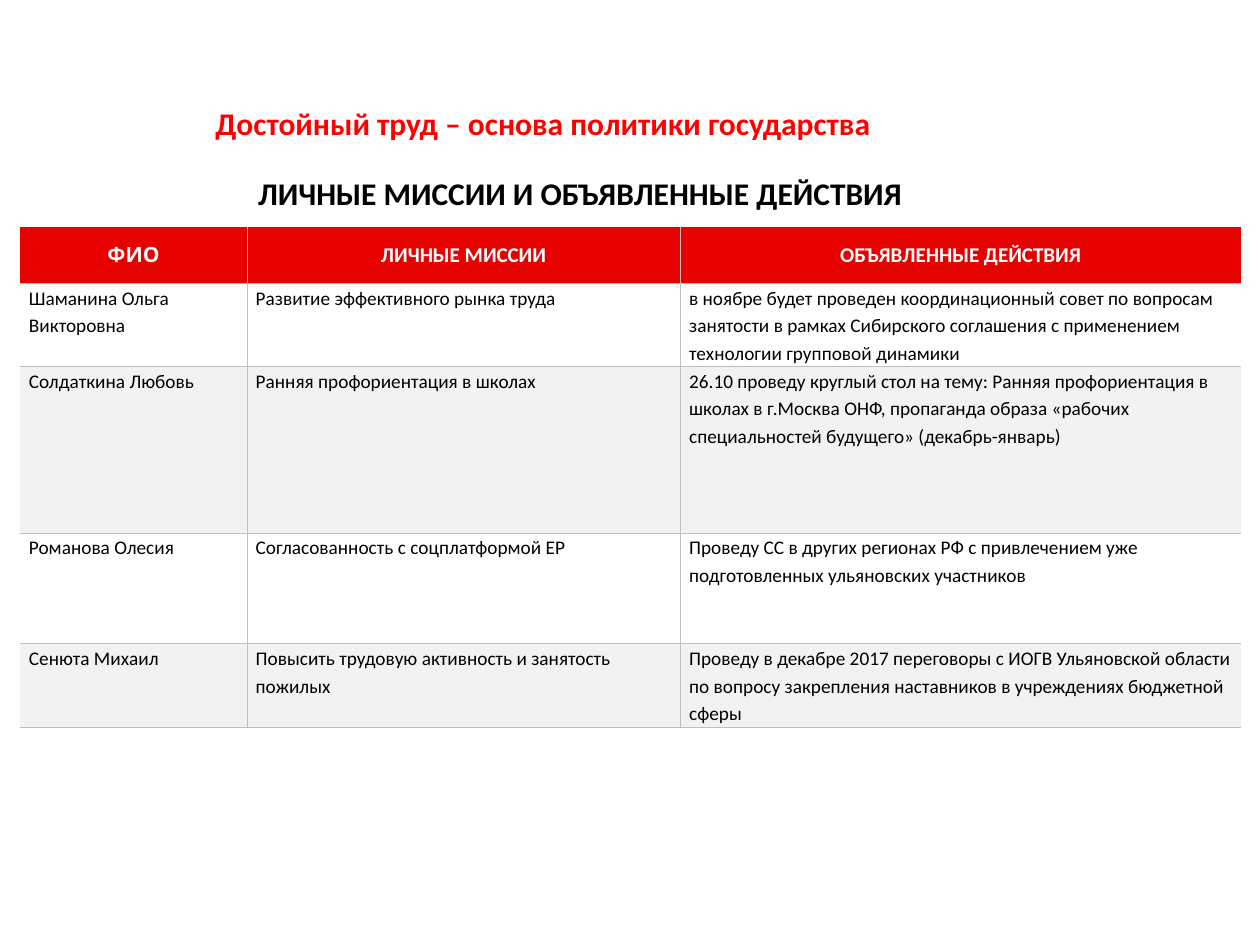
from lxml import etree
from pptx import Presentation
from pptx.dml.color import RGBColor
from pptx.enum.text import MSO_ANCHOR as Anchor, PP_ALIGN as Align
from pptx.oxml.ns import qn
from pptx.util import Inches, Pt

COLORS = {"red": "FF0000", "header": "E60000", "band": "F2F2F2",
          "line": "BFBFBF", "black": "000000", "white": "FFFFFF"}
NO_STYLE = "{2D5ABB26-0587-4C30-8999-92F81FD0307C}"
HEADERS = ["ФИО", "ЛИЧНЫЕ МИССИИ", "ОБЪЯВЛЕННЫЕ ДЕЙСТВИЯ"]
MISSIONS = [
    ("Шаманина Ольга Викторовна", "Развитие эффективного рынка труда",
     "в ноябре будет проведен координационный совет по вопросам занятости "
     "в рамках Сибирского соглашения с применением технологии групповой динамики"),
    ("Солдаткина Любовь", "Ранняя профориентация в школах",
     "26.10 проведу круглый стол на тему: Ранняя профориентация в школах в г.Москва ОНФ, "
     "пропаганда образа «рабочих специальностей будущего» (декабрь-январь)"),
    ("Романова Олесия", "Согласованность с соцплатформой ЕР",
     "Проведу СС в других регионах РФ с привлечением уже подготовленных "
     "ульяновских участников"),
    ("Сенюта Михаил", "Повысить трудовую активность и занятость пожилых",
     "Проведу в декабре 2017 переговоры с ИОГВ Ульяновской области по вопросу "
     "закрепления наставников в учреждениях бюджетной сферы"),
]
COLUMN_WIDTHS = [1.8, 3.44, 4.45]
ROW_HEIGHTS = [0.45, 0.66, 1.32, 0.88, 0.66]


def rgb(name):
    return RGBColor.from_string(COLORS[name])


def add_span(para, text, size, color, bold, font="Calibri"):
    span = para.add_run()
    span.text = text
    span.font.name, span.font.size, span.font.bold = font, Pt(size), bold
    span.font.color.rgb = rgb(color)


def place_title(slide, left, top, width, height):
    title = slide.shapes.title
    title.left, title.top, title.width, title.height = left, top, width, height
    frame = title.text_frame
    frame.word_wrap = True
    frame.vertical_anchor = Anchor.MIDDLE
    para = frame.paragraphs[0]
    para.alignment = Align.LEFT
    add_span(para, "Достойный труд – основа политики государства", 18, "red", True)


def place_subtitle(slide, left, top, width, height):
    box = slide.shapes.add_textbox(left, top, width, height)
    box.text_frame.word_wrap = False
    add_span(box.text_frame.paragraphs[0], "ЛИЧНЫЕ МИССИИ И ОБЪЯВЛЕННЫЕ ДЕЙСТВИЯ",
             18, "black", True)


def set_borders(cell, visible):
    """Draw the given sides in grey and leave the others without a line."""
    properties = cell._tc.get_or_add_tcPr()
    for side in ("L", "R", "T", "B"):
        line = etree.SubElement(properties, qn(f"a:ln{side}"), w=str(Pt(0.5)))
        if side in visible:
            fill = etree.SubElement(line, qn("a:solidFill"))
            etree.SubElement(fill, qn("a:srgbClr"), val=COLORS["line"])
        else:
            etree.SubElement(line, qn("a:noFill"))


def format_cell(cell, text, row, column):
    header = row == 0
    # Outer left, right and top edges stay open
    set_borders(cell, "B" + ("" if header else "T") + ("L" if column > 0 else "")
                + ("R" if column < len(HEADERS) - 1 else ""))
    if header or row % 2 == 0:
        cell.fill.solid()
        cell.fill.fore_color.rgb = rgb("header" if header else "band")
    else:
        cell.fill.background()

    cell.margin_left = cell.margin_right = Inches(0.07)
    cell.margin_top = cell.margin_bottom = Inches(0.04 if header else 0)
    cell.vertical_anchor = Anchor.MIDDLE if header else Anchor.TOP
    para = cell.text_frame.paragraphs[0]
    if header:
        para.alignment = Align.CENTER
        add_span(para, text, 12, "white", True, "Cabin" if column == 0 else "Calibri")
    else:
        para.line_spacing = 1.15
        add_span(para, text, 11, "black", False)


def place_missions(slide, left, top, width, height):
    rows = [HEADERS, *MISSIONS]
    table = slide.shapes.add_table(len(rows), len(HEADERS), left, top, width, height).table
    table._tbl.tblPr.find(qn("a:tableStyleId")).text = NO_STYLE
    table.horz_banding = False
    for column, size in zip(table.columns, COLUMN_WIDTHS):
        column.width = Inches(size)
    for row, size in zip(table.rows, ROW_HEIGHTS):
        row.height = Inches(size)
    for r, texts in enumerate(rows):
        for c, text in enumerate(texts):
            format_cell(table.cell(r, c), text, r, c)


def main():
    deck = Presentation()
    deck.slide_width, deck.slide_height = Inches(10), Inches(7.5)
    slide = deck.slides.add_slide(deck.slide_layouts[5])
    # Missions table
    place_missions(slide, Inches(0.16), Inches(1.8),
                   Inches(sum(COLUMN_WIDTHS)), Inches(sum(ROW_HEIGHTS)))
    # Headings above the table
    place_subtitle(slide, Inches(1.95), Inches(1.33), Inches(5.37), Inches(0.4))
    place_title(slide, Inches(1.61), Inches(0.78), Inches(7.15), Inches(0.39))
    deck.save("out.pptx")


if __name__ == "__main__":
    main()
